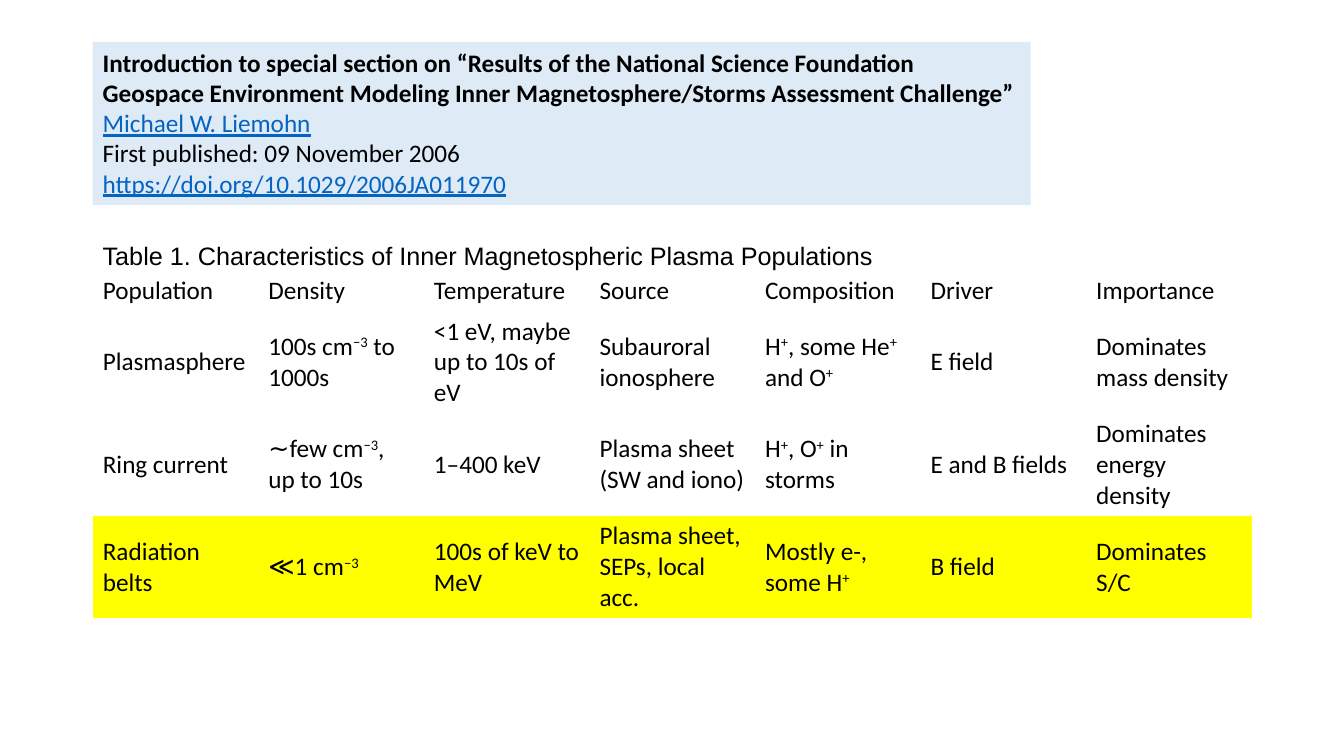
from pptx import Presentation
from pptx.dml.color import RGBColor
from pptx.enum.shapes import MSO_SHAPE
from pptx.enum.text import MSO_ANCHOR, PP_ALIGN
from pptx.util import Pt

BLACK = "000000"
LINK_BLUE = "0563C1"
PALE_BLUE = "DEEBF7"
YELLOW = "FFFF00"
NO_STYLE = "{2D5ABB26-0587-4C30-8999-92F81FD0307C}"
LEFT = 66.24

# Text, colour, bold, underline
CITATION = [
    ("Introduction to special section on “Results of the National Science Foundation",
     BLACK, True, False),
    ("Geospace Environment Modeling Inner Magnetosphere/Storms Assessment Challenge”",
     BLACK, True, False),
    ("Michael W. Liemohn", LINK_BLUE, False, True),
    ("First published: 09 November 2006", BLACK, False, False),
    ("https://doi.org/10.1029/2006JA011970", LINK_BLUE, False, True),
]

# Text between carets is superscript
POPULATIONS = [
    ["Population", "Density", "Temperature", "Source", "Composition", "Driver",
     "Importance"],
    ["Plasmasphere", "100s cm^−3^ to 1000s", "<1 eV, maybe up to 10s of eV",
     "Subauroral ionosphere", "H^+^, some He^+^ and O^+^", "E field",
     "Dominates mass density"],
    ["Ring current", "∼few cm^−3^, up to 10s", "1–400 keV",
     "Plasma sheet (SW and iono)", "H^+^, O^+^ in storms", "E and B fields",
     "Dominates energy density"],
    ["Radiation belts", "≪1 cm^−3^", "100s of keV to MeV",
     "Plasma sheet, SEPs, local acc.", "Mostly e-, some H^+^", "B field",
     "Dominates S/C"],
]


def color(hex_string):
    return RGBColor.from_string(hex_string)


def format_font(font, name="Calibri", hex_string=BLACK):
    font.name = name
    font.size = Pt(18)
    font.color.rgb = color(hex_string)


def add_citation(slide):
    shape = slide.shapes.add_shape(
        MSO_SHAPE.RECTANGLE, Pt(LEFT), Pt(30), Pt(670), Pt(116.6))
    shape.shadow.inherit = False
    shape.fill.solid()
    shape.fill.fore_color.rgb = color(PALE_BLUE)
    shape.line.fill.background()
    text_frame = shape.text_frame
    text_frame.word_wrap = False
    text_frame.vertical_anchor = MSO_ANCHOR.TOP
    text_frame.text = "\n".join(line[0] for line in CITATION)
    for paragraph, (_, hex_string, bold, underline) in zip(
            text_frame.paragraphs, CITATION):
        paragraph.alignment = PP_ALIGN.LEFT
        font = paragraph.runs[0].font
        format_font(font, hex_string=hex_string)
        font.bold = bold
        font.underline = underline


def add_caption(slide, text):
    box = slide.shapes.add_textbox(Pt(LEFT), Pt(168), Pt(600), Pt(28))
    text_frame = box.text_frame
    text_frame.word_wrap = True
    text_frame.text = text
    format_font(text_frame.paragraphs[0].runs[0].font, "Arial")


def fill_cell(cell, text, highlighted):
    cell.vertical_anchor = MSO_ANCHOR.MIDDLE
    if highlighted:
        cell.fill.solid()
        cell.fill.fore_color.rgb = color(YELLOW)
    else:
        cell.fill.background()
    paragraph = cell.text_frame.paragraphs[0]
    for index, part in enumerate(text.split("^")):
        if part:
            run = paragraph.add_run()
            run.text = part
            format_font(run.font)
            if index % 2:
                run.font._element.set("baseline", "30000")


def add_population_table(slide):
    row_count, column_count = len(POPULATIONS), len(POPULATIONS[0])
    table = slide.shapes.add_table(
        row_count, column_count, Pt(LEFT), Pt(193), Pt(828), Pt(245.2)).table
    table.first_row = False
    table.horz_banding = False
    table._tbl.tblPr[0].text = NO_STYLE
    for column in table.columns:
        column.width = Pt(828 / column_count)
    for row_index, (row, texts) in enumerate(zip(table.rows, POPULATIONS)):
        row.height = Pt(72 if row_index else 29.2)
        for cell, text in zip(row.cells, texts):
            fill_cell(cell, text, highlighted=row_index == row_count - 1)


def main():
    presentation = Presentation()
    presentation.slide_width = Pt(960)
    presentation.slide_height = Pt(540)
    slide = presentation.slides.add_slide(presentation.slide_layouts[6])

    # Plasma populations with their caption
    add_population_table(slide)
    add_caption(slide, "Table 1. Characteristics of Inner Magnetospheric Plasma Populations")

    # Source article
    add_citation(slide)

    presentation.save("out.pptx")


if __name__ == "__main__":
    main()
